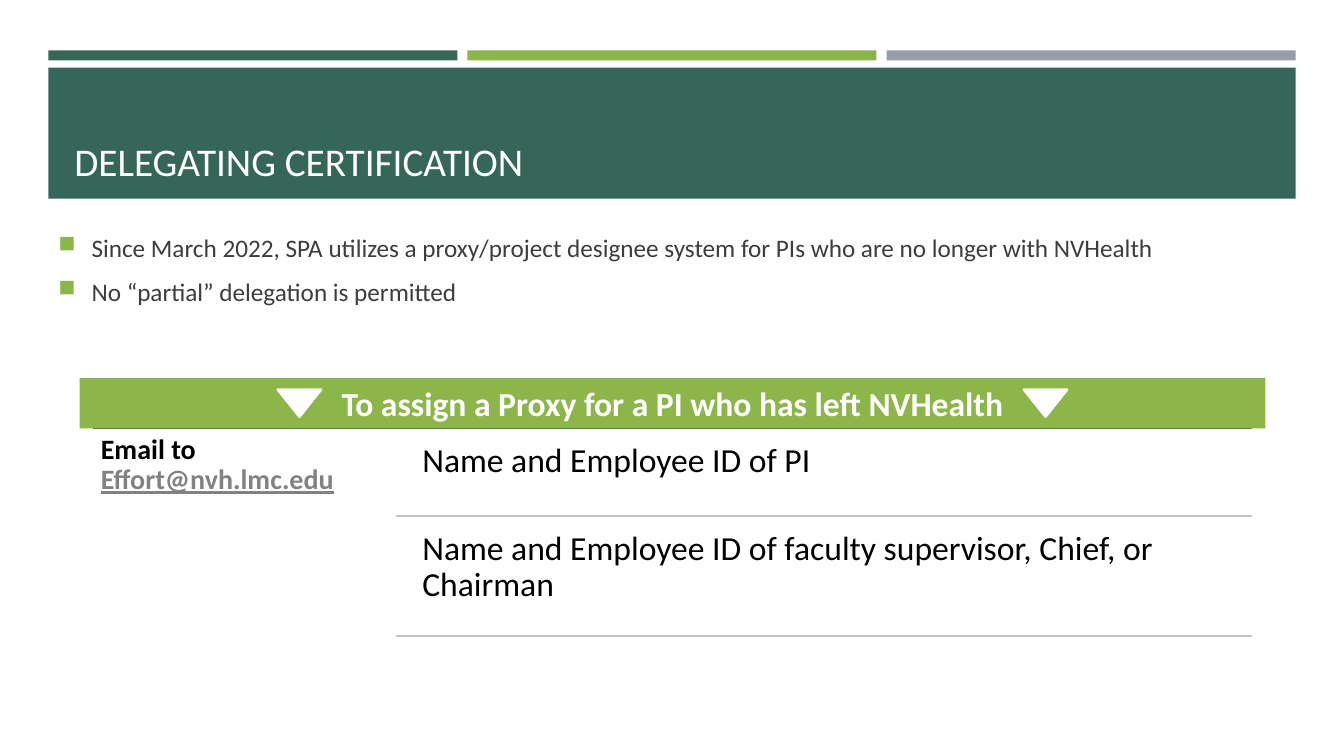
from pptx import Presentation
from pptx.dml.color import RGBColor
from pptx.enum.shapes import MSO_CONNECTOR as Link, MSO_SHAPE as Kind
from pptx.enum.text import MSO_ANCHOR as Anchor, PP_ALIGN as Align
from pptx.oxml.ns import qn
from pptx.util import Inches, Pt
from lxml.etree import SubElement

GREEN, LIME, GREY = "366658", "8CB64A", "969FA7"
WHITE, BLACK, INK, RULE, MAIL = "FFFFFF", "000000", "3D3D3D", "BFC6C4", "828282"


def tint(text):
    return RGBColor.from_string(text)


def block(slide, kind, box, fill):
    shape = slide.shapes.add_shape(kind, *map(Inches, box))
    shape.shadow.inherit = False
    shape.fill.solid()
    shape.fill.fore_color.rgb = tint(fill)
    shape.line.fill.background()
    return shape


def rule(slide, left, right, top, color):
    line = slide.shapes.add_connector(
        Link.STRAIGHT, *map(Inches, (left, top, right, top)))
    line.line.color.rgb = tint(color)
    line.line.width = Pt(1.75)
    SubElement(line._element.spPr, qn("a:effectLst"))


def style(run, size, color, bold=False):
    font = run.font
    font.name, font.size, font.bold = "Calibri", Pt(size), bold
    font.color.rgb = tint(color)


def label(slide, box, lines, size, color, anchor=Anchor.TOP, inset=None):
    frame = slide.shapes.add_textbox(*map(Inches, box)).text_frame
    frame.word_wrap = True
    frame.vertical_anchor = anchor
    if inset:
        frame.margin_left = frame.margin_right = Inches(inset)
        frame.margin_top = frame.margin_bottom = Inches(inset)
    frame.text = "\n".join(lines)
    for para in frame.paragraphs:
        style(para.runs[0], size, color)
    return frame


def bullet(para):
    props = para._p.get_or_add_pPr()
    props.set("marL", str(Inches(0.33)))
    props.set("indent", str(-Inches(0.33)))
    para.space_before, para.space_after = Pt(3.6), Pt(6)
    color = SubElement(props, qn("a:buClr"))
    SubElement(color, qn("a:srgbClr"), val=LIME)
    SubElement(props, qn("a:buSzPct"), val="92000")
    SubElement(props, qn("a:buChar"), char="■")


def header(slide, left, top, width, height):
    # Three equal bars above the title band
    gap = 0.1
    bar = (width - 2 * gap) / 3
    for col, fill in enumerate((GREEN, LIME, GREY)):
        block(slide, Kind.RECTANGLE,
              (left + col * (bar + gap), top, bar, 0.1), fill)
    block(slide, Kind.RECTANGLE,
          (left, top + 0.17, width, height - 0.17), GREEN)
    label(slide, (left + 0.16, top + 0.27, width - 0.31, height - 0.36),
          ["DELEGATING CERTIFICATION"], 28, WHITE, Anchor.BOTTOM)


def points(slide, *box):
    frame = label(slide, box, [
        "Since March 2022, SPA utilizes a proxy/project designee system "
        "for PIs who are no longer with NVHealth",
        "No “partial” delegation is permitted",
    ], 18, INK, Anchor.MIDDLE)
    for para in frame.paragraphs:
        bullet(para)


def steps(slide, left, top, width):
    # Contact on the left, ruled items on the right
    right = left + width
    rule(slide, left, right, top, GREEN)
    para = label(slide, (left, top, 3.02, 1.93), ["Email to "],
                 20, BLACK, inset=0.08).paragraphs[0]
    para.line_spacing = 0.9
    para.runs[0].font.bold = True
    mail = para.add_run()
    mail.text = "Effort@nvh.lmc.edu"
    style(mail, 20, MAIL, True)
    mail.font.underline = True

    items = (("Name and Employee ID of PI", 0.06, 0.82),
             ("Name and Employee ID of faculty supervisor, Chief, or Chairman",
              0.93, 1.14))
    for text, drop, tall in items:
        frame = label(slide, (left + 3.17, top + drop, width - 3.19, tall),
                      [text], 24, BLACK, inset=0.1)
        frame.paragraphs[0].line_spacing = 0.9
        rule(slide, left + 3.01, right, top + drop + tall, RULE)


def banner(slide, left, top, width, height):
    band = block(slide, Kind.RECTANGLE, (left, top, width, height), LIME)
    frame = band.text_frame
    frame.word_wrap = True
    frame.vertical_anchor = Anchor.MIDDLE
    frame.text = "To assign a Proxy for a PI who has left NVHealth"
    para = frame.paragraphs[0]
    para.alignment = Align.CENTER
    style(para.runs[0], 24, WHITE, True)
    # Triangles mirrored about the centre
    wide, tall = 0.43, 0.27
    for side in (-1, 1):
        mark = block(slide, Kind.FLOWCHART_MERGE,
                     (left + width / 2 + side * 3.7 - wide / 2,
                      top + (height - tall) / 2, wide, tall), WHITE)
        mark.line.color.rgb = tint(WHITE)
        mark.line.width = Pt(1.75)


def main():
    deck = Presentation()
    deck.slide_width, deck.slide_height = Inches(13.33), Inches(7.5)
    slide = deck.slides.add_slide(deck.slide_layouts[6])
    header(slide, 0.48, 0.5, 12.37, 1.47)
    points(slide, 0.48, 0.66, 12.06, 4.02)
    steps(slide, 0.92, 4.24, 11.5)
    banner(slide, 0.79, 3.75, 11.76, 0.5)
    deck.save("out.pptx")


if __name__ == "__main__":
    main()
